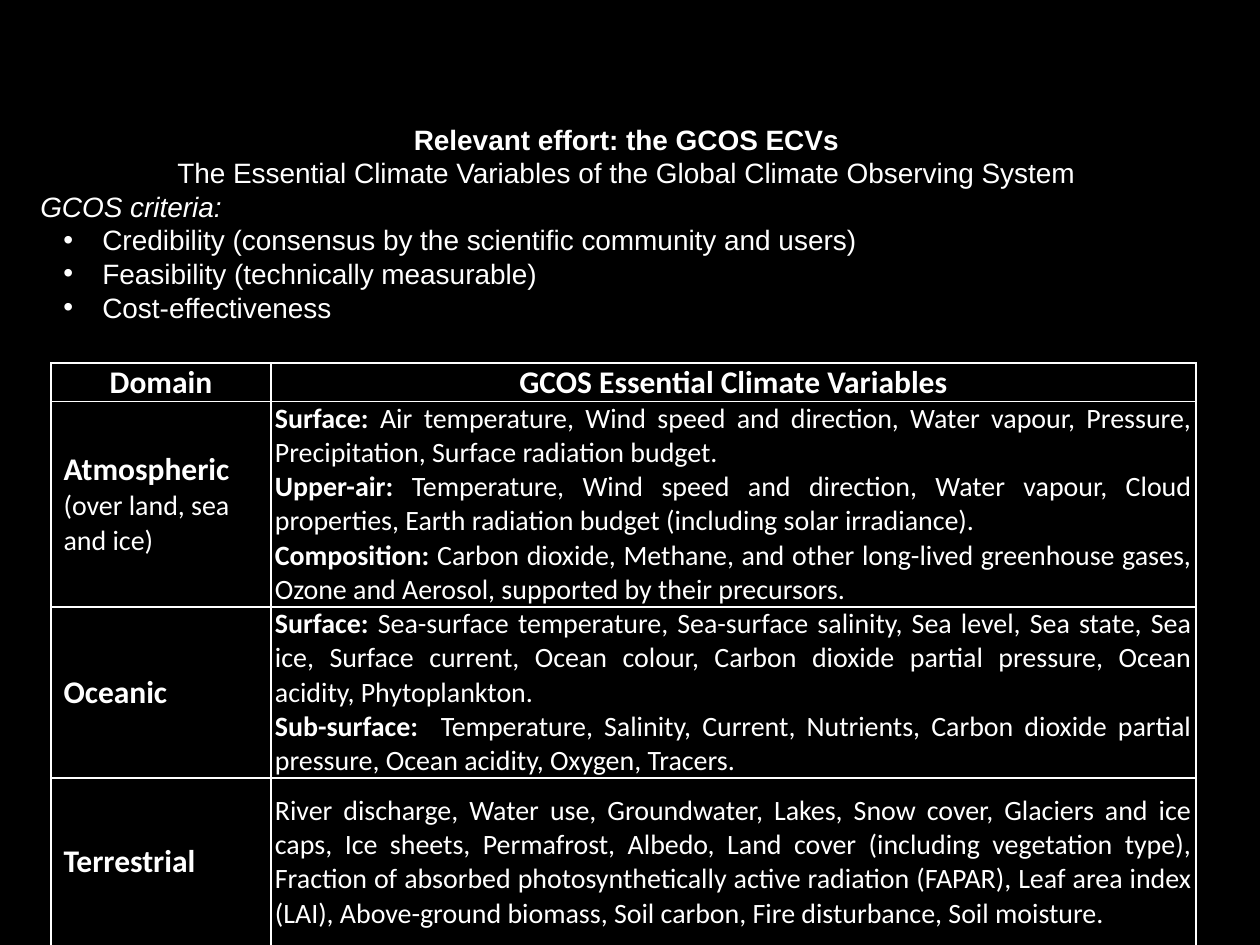
from lxml import etree
from pptx import Presentation
from pptx.dml.color import RGBColor
from pptx.enum.text import MSO_ANCHOR, PP_ALIGN as ALIGN
from pptx.oxml.ns import qn
from pptx.util import Emu, Pt

EMU_PER_PX = 914400 / 126
BLACK, WHITE = "000000", "FFFFFF"

HEADING = {"size": Pt(18), "bold": True}
LABEL = {"size": Pt(16), "bold": True}
BODY = {"size": Pt(16), "bold": False}
CRITERIA = {"size": Pt(16), "italic": True}

INTRO = [
    (ALIGN.CENTER, [("Relevant effort: the GCOS ECVs", LABEL)]),
    (ALIGN.CENTER, [("The Essential Climate Variables of the Global Climate "
                     "Observing System", BODY)]),
    (ALIGN.JUSTIFY, [("GCOS criteria: ", CRITERIA)]),
]
BULLETS = [
    "Credibility (consensus by the scientific community and users)",
    "Feasibility (technically measurable)",
    "Cost-effectiveness ",
]

HEADERS = ["Domain", "GCOS Essential Climate Variables"]
# Each domain: name, lines below the name, (label, variables) groups
DOMAINS = [
    ("Atmospheric", ["(over land, sea", "and ice)"], [
        ("Surface: ", "Air temperature, Wind speed and direction, Water vapour, "
         "Pressure, Precipitation, Surface radiation budget."),
        ("Upper-air: ", "Temperature, Wind speed and direction, Water vapour, "
         "Cloud properties, Earth radiation budget (including solar irradiance)."),
        ("Composition: ", "Carbon dioxide, Methane, and other long-lived greenhouse "
         "gases, Ozone and Aerosol, supported by their precursors."),
    ]),
    ("Oceanic", [], [
        ("Surface: ", "Sea-surface temperature, Sea-surface salinity, Sea level, "
         "Sea state, Sea ice, Surface current, Ocean colour, Carbon dioxide partial "
         "pressure, Ocean acidity, Phytoplankton."),
        ("Sub-surface:  ", "Temperature, Salinity, Current, Nutrients, Carbon dioxide "
         "partial pressure, Ocean acidity, Oxygen, Tracers."),
    ]),
    ("Terrestrial", [], [
        ("", "River discharge, Water use, Groundwater, Lakes, Snow cover, Glaciers "
         "and ice caps, Ice sheets, Permafrost, Albedo, Land cover (including "
         "vegetation type), Fraction of absorbed photosynthetically active radiation "
         "(FAPAR), Leaf area index (LAI), Above-ground biomass, Soil carbon, Fire "
         "disturbance, Soil moisture."),
    ]),
]
COLUMN_WIDTHS = [220, 925]
ROW_HEIGHTS = [38, 202, 168, 168]


def px(length):
    return Emu(round(length * EMU_PER_PX))


def color(hex_value):
    return RGBColor.from_string(hex_value)


def add_bullet(paragraph):
    properties = paragraph._p.get_or_add_pPr()
    properties.set("marL", str(px(62)))
    properties.set("indent", str(-px(39)))
    etree.SubElement(properties, qn("a:buFont"), typeface="Arial")
    etree.SubElement(properties, qn("a:buChar"), char="•")


def write_paragraph(paragraph, alignment, runs, font_name):
    paragraph.alignment = alignment
    for text, font_format in runs:
        run = paragraph.add_run()
        run.text = text
        run.font.name = font_name
        run.font.color.rgb = color(WHITE)
        for attribute, value in font_format.items():
            setattr(run.font, attribute, value)


def write_paragraphs(text_frame, paragraphs, font_name):
    for index, (alignment, runs) in enumerate(paragraphs):
        paragraph = text_frame.add_paragraph() if index else text_frame.paragraphs[0]
        write_paragraph(paragraph, alignment, runs, font_name)


def add_intro(slide):
    text_frame = slide.shapes.add_textbox(px(28), px(116), px(1197), px(217)).text_frame
    text_frame.word_wrap = True
    write_paragraphs(text_frame, INTRO, "Arial")
    for text in BULLETS:
        paragraph = text_frame.add_paragraph()
        add_bullet(paragraph)
        write_paragraph(paragraph, ALIGN.JUSTIFY, [(text, BODY)], "Arial")


def set_borders(cell):
    properties = cell._tc.get_or_add_tcPr()
    for position, side in enumerate(("a:lnL", "a:lnR", "a:lnT", "a:lnB")):
        line = etree.Element(qn(side), w=str(Pt(1)))
        fill = etree.SubElement(line, qn("a:solidFill"))
        etree.SubElement(fill, qn("a:srgbClr"), val=WHITE)
        properties.insert(position, line)


def fill_cell(cell, paragraphs, tight):
    """Write a framed cell; a tight one has almost no margins."""
    cell.fill.solid()
    cell.fill.fore_color.rgb = color(BLACK)
    cell.vertical_anchor = MSO_ANCHOR.MIDDLE
    if tight:
        cell.margin_left = cell.margin_right = px(4)
        cell.margin_top = cell.margin_bottom = 0
    set_borders(cell)
    write_paragraphs(cell.text_frame, paragraphs, "Calibri")


def domain_paragraphs(name, details):
    alignment = ALIGN.LEFT if details else ALIGN.JUSTIFY
    return [(alignment, [(name, HEADING)])] + [
        (alignment, [(detail, BODY)]) for detail in details]


def variable_paragraphs(groups):
    return [(ALIGN.JUSTIFY, ([(label, LABEL)] if label else []) + [(variables, BODY)])
            for label, variables in groups]


def add_variables_table(slide):
    table = slide.shapes.add_table(
        len(ROW_HEIGHTS), len(COLUMN_WIDTHS), px(51), px(363),
        px(sum(COLUMN_WIDTHS)), px(sum(ROW_HEIGHTS))).table
    table.first_row = table.horz_banding = False
    for column, width in zip(table.columns, COLUMN_WIDTHS):
        column.width = px(width)
    for row, height in zip(table.rows, ROW_HEIGHTS):
        row.height = px(height)
    for column, header in enumerate(HEADERS):
        fill_cell(table.cell(0, column), [(ALIGN.CENTER, [(header, HEADING)])], True)
    for row, (name, details, groups) in enumerate(DOMAINS, start=1):
        fill_cell(table.cell(row, 0), domain_paragraphs(name, details), False)
        fill_cell(table.cell(row, 1), variable_paragraphs(groups), True)


def main():
    presentation = Presentation()
    presentation.slide_width, presentation.slide_height = px(1260), px(945)
    slide = presentation.slides.add_slide(presentation.slide_layouts[6])
    slide.background.fill.solid()
    slide.background.fill.fore_color.rgb = color(BLACK)
    add_variables_table(slide)
    add_intro(slide)
    presentation.save("out.pptx")


if __name__ == "__main__":
    main()
